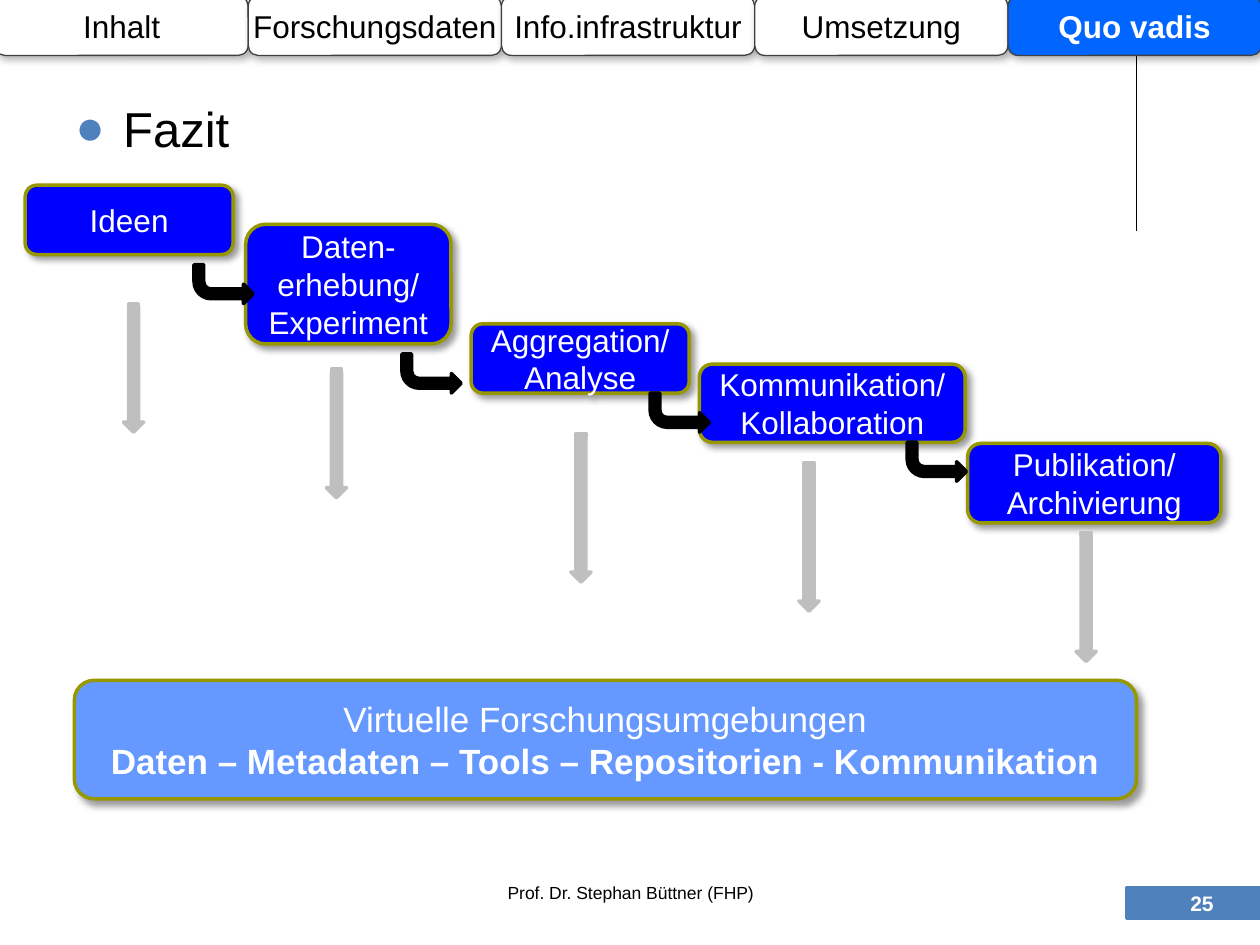
from lxml import etree
from pptx import Presentation
from pptx.dml.color import RGBColor
from pptx.enum.shapes import MSO_CONNECTOR, MSO_SHAPE
from pptx.enum.text import MSO_ANCHOR, PP_ALIGN
from pptx.oxml.ns import qn
from pptx.util import Inches, Pt

ROUNDED, RECTANGLE = MSO_SHAPE.ROUNDED_RECTANGLE, MSO_SHAPE.RECTANGLE
BENT_ARROW, STRIPED_ARROW = MSO_SHAPE.BENT_ARROW, MSO_SHAPE.STRIPED_RIGHT_ARROW
LEFT, CENTER, RIGHT = PP_ALIGN.LEFT, PP_ALIGN.CENTER, PP_ALIGN.RIGHT
TOP, MIDDLE = MSO_ANCHOR.TOP, MSO_ANCHOR.MIDDLE

BLACK, WHITE, STEEL, OLIVE, GREY = "000000", "FFFFFF", "4F81BD", "979700", "BFBFBF"
STEP_SHADOW = (40, 4, 3, 45)
TAB_SHADOW = (30, 4.5, 2.6, 53)

prs = Presentation()
prs.slide_width, prs.slide_height = Inches(10), Inches(7.5)
slide = prs.slides.add_slide(prs.slide_layouts[6])


def add_block(kind, box, fill, line, weight=2, shadow=None):
    """Add a preset shape; shadow is (opacity %, blur pt, distance pt, angle)."""
    block = slide.shapes.add_shape(kind, *[Inches(v) for v in box])
    block.fill.solid()
    block.fill.fore_color.rgb = RGBColor.from_string(fill)
    block.line.color.rgb = RGBColor.from_string(line)
    block.line.width = Pt(weight)
    block.shadow.inherit = False
    if shadow:
        opacity, blur, distance, angle = shadow
        effects = block.element.spPr.find(qn("a:effectLst"))
        outer = etree.SubElement(
            effects, qn("a:outerShdw"), blurRad=str(Pt(blur)), dist=str(Pt(distance)),
            dir=str(angle * 60000), algn="ctr", rotWithShape="0")
        color = etree.SubElement(outer, qn("a:srgbClr"), val=BLACK)
        etree.SubElement(color, qn("a:alpha"), val=str(opacity * 1000))
    return block


def write(holder, text, size=18, color=WHITE, align=CENTER, anchor=MIDDLE, wrap=True,
          bold_line=None, bullet=None):
    """Fill a shape or text box with one paragraph per line of text."""
    frame = holder.text_frame
    frame.word_wrap = wrap
    frame.vertical_anchor = anchor
    for index, words in enumerate(text.split("\n")):
        paragraph = frame.add_paragraph() if index else frame.paragraphs[0]
        paragraph.alignment = align
        if bullet:
            props = paragraph._p.get_or_add_pPr()
            props.set("marL", str(Inches(0.38)))
            props.set("indent", str(Inches(-0.38)))
            bullet_color = etree.SubElement(props, qn("a:buClr"))
            etree.SubElement(bullet_color, qn("a:srgbClr"), val=STEEL)
            etree.SubElement(props, qn("a:buFont"), typeface="Arial")
            etree.SubElement(props, qn("a:buChar"), char=bullet)
        run = paragraph.add_run()
        run.text = words
        run.font.name = "Arial"
        run.font.size = Pt(size)
        run.font.bold = index == bold_line
        run.font.color.rgb = RGBColor.from_string(color)


# Rule, footer and heading
rule = slide.shapes.add_connector(
    MSO_CONNECTOR.STRAIGHT, Inches(9.02), Inches(0.17), Inches(9.02), Inches(1.83))
rule.line.color.rgb = RGBColor.from_string(BLACK)
rule.line.width = Pt(0.75)
etree.SubElement(rule.element.spPr, qn("a:effectLst"))

add_block(RECTANGLE, (8.94, 7.05, 1.06, 0.24), STEEL, STEEL)
author = slide.shapes.add_textbox(Inches(3.43), Inches(6.95), Inches(3.15), Inches(0.27))
write(author, "Prof. Dr. Stephan Büttner (FHP)", size=10, color=BLACK, anchor=TOP)
heading = slide.shapes.add_textbox(Inches(0.5), Inches(0.68), Inches(9), Inches(6.03))
heading.text_frame.margin_top = Inches(0.1)
write(heading, "Fazit", size=28, color=BLACK, align=LEFT, anchor=TOP, bullet="●")
page_number = slide.shapes.add_textbox(Inches(9.02), Inches(6.97), Inches(0.71), Inches(0.4))
write(page_number, "25", size=12, align=RIGHT, bold_line=0)

# Research process, step by step
steps = [
    ("Ideen", (0.2, 1.47, 1.65, 0.55)),
    ("Daten-erhebung/ Experiment", (1.95, 1.78, 1.63, 0.95)),
    ("Aggregation/ Analyse", (3.74, 2.57, 1.73, 0.55)),
    ("Kommunikation/ Kollaboration", (5.55, 2.89, 2.11, 0.62)),
    ("Publikation/ Archivierung", (7.68, 3.52, 2.01, 0.63)),
]
for label, box in steps:
    write(add_block(ROUNDED, box, "0000FF", OLIVE, shadow=STEP_SHADOW), label)

for left, top in [(1.54, 2.1), (3.19, 2.81), (5.16, 3.12), (7.2, 3.51)]:
    next_step = add_block(BENT_ARROW, (left, top, 0.47, 0.31), BLACK, BLACK)
    next_step.element.spPr.get_or_add_xfrm().set("flipV", "1")

# Arrows down to the shared environment: centre x, centre y, length
for x, y, length in [(1.06, 2.92, 1.02), (2.67, 3.44, 1.02), (4.61, 4.03, 1.18),
                     (6.42, 4.26, 1.18), (8.62, 4.74, 1.02)]:
    down = add_block(STRIPED_ARROW, (x - length / 2, y - 0.08, length, 0.16), GREY, GREY)
    down.rotation = 90

environment = add_block(ROUNDED, (0.59, 5.4, 8.43, 0.94), "6699FF", OLIVE, shadow=STEP_SHADOW)
write(environment, "Virtuelle Forschungsumgebungen\n"
      "Daten – Metadaten – Tools – Repositorien - Kommunikation", size=20, bold_line=1)

# Navigation tabs
tabs = ["Inhalt", "Forschungsdaten", "Info.infrastruktur", "Umsetzung", "Quo vadis"]
for index, label in enumerate(tabs):
    current = label == "Quo vadis"
    tab = add_block(ROUNDED, (-0.04 + 2.01 * index, -0.03, 2.01, 0.47),
                    "0066FF" if current else WHITE, "404040", weight=0.75, shadow=TAB_SHADOW)
    write(tab, label, color=WHITE if current else BLACK, wrap=False,
          bold_line=0 if current else None)

prs.save("out.pptx")
